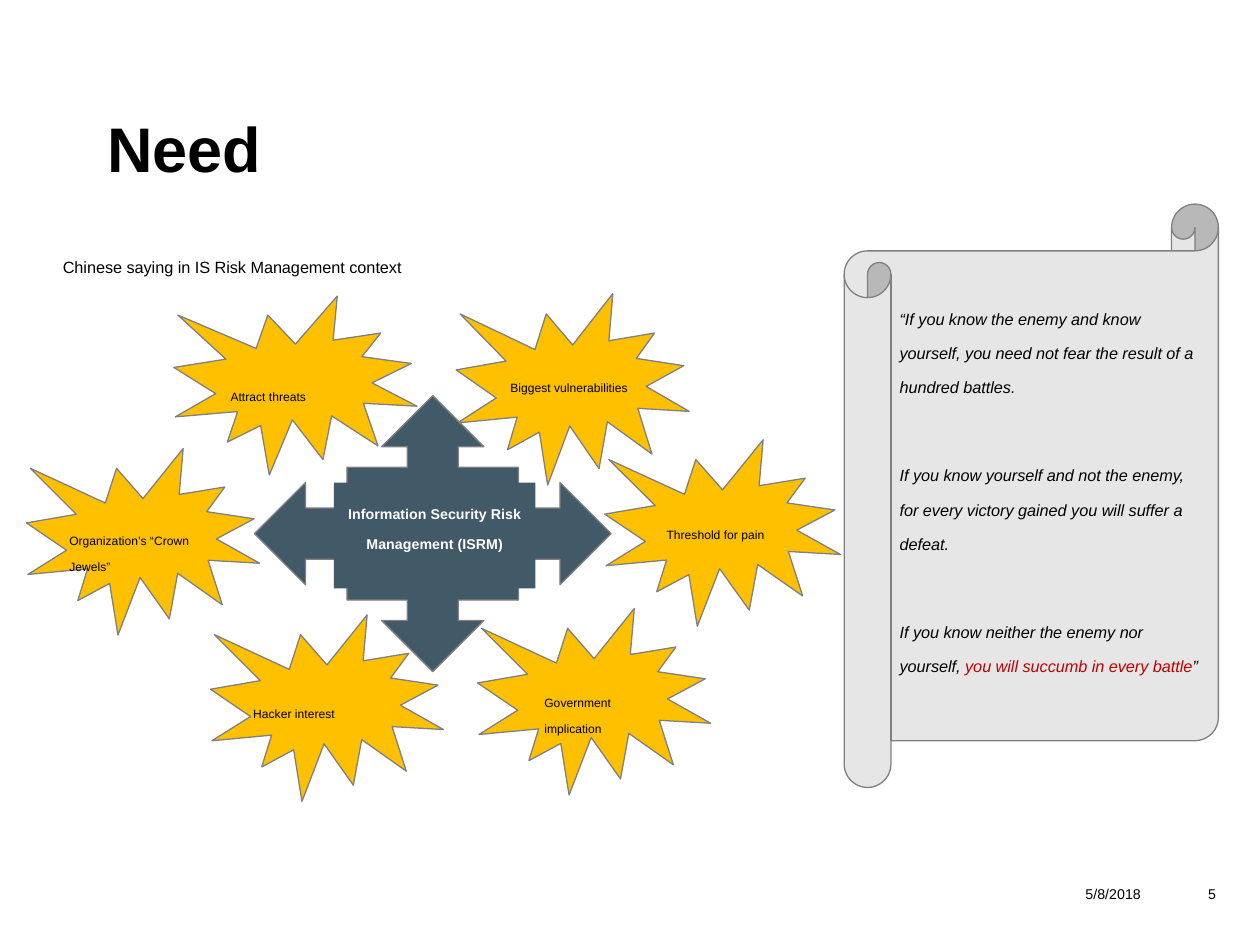
from pptx import Presentation
from pptx.dml.color import RGBColor
from pptx.enum.shapes import MSO_SHAPE as Kind
from pptx.enum.text import MSO_ANCHOR as Anchor, MSO_AUTO_SIZE as Fit, PP_ALIGN as Align
from pptx.util import Inches, Pt

COLORS = {"ink": "000000", "gold": "FFC000", "slate": "425968", "edge": "808080",
          "paper": "E6E6E6", "red": "C00000", "white": "FFFFFF"}
COLS = 100
LOW = "-33000"

TITLE = ("Need", (7.5, 4.2, 85, 15))
NOTES = [
    ("5/8/2018", (79.2, 68.3, 18.3, 5), 14, Align.CENTER),
    ("5", (92.5, 68.3, 5, 5), 14, Align.RIGHT),
    ("Chinese saying in IS Risk Management context", (4, 18.3, 58.5, 3.7), 16, Align.LEFT),
]
LEFT = [
    ("Organization’s “Crown Jewels”", (2.1, 35.6, 18.5, 14.8), (5.5, 40.7, 12.7, 3.8)),
    ("Attract threats", (13.8, 23.5, 19.3, 14.2), (18.3, 29.3, 10.5, 2.1)),
    ("Biggest vulnerabilities", (36.2, 23.3, 18.5, 15.2), (40.5, 28.6, 12.7, 3.8)),
    ("Threshold for pain", (48, 34.9, 18.7, 14.8), (52.9, 40.2, 12.7, 3.8)),
]
LAST = [
    ("Hacker interest", (16.7, 48.8, 18.5, 14.8), (20.1, 54.4, 12.7, 2.1)),
    ("Government implication", (37.9, 48.3, 18.5, 14.8), (43.2, 53.6, 9.5, 3.8)),
]
CORE = ("Information Security Risk Management (ISRM)",
        (20.2, 31.4, 28.3, 21.9), (26.5, 38.3, 16, 8.4))
SCROLL = ((67, 16.2, 29.7, 46.3), (71.4, 22.5, 24.3, 34))
SAYING = [
    [("“If you know the enemy and know yourself, you need not fear the result of a "
      "hundred battles.", "ink")],
    [("If you know yourself and not the enemy, for every victory gained you will "
      "suffer a defeat.", "ink")],
    [("If you know neither the enemy nor yourself, ", "ink"),
     ("you will succumb in every battle", "red"), ("”", "ink")],
]

deck = Presentation()
deck.slide_width, deck.slide_height = Inches(10), Inches(7.5)
slide = deck.slides.add_slide(deck.slide_layouts[5])
unit = deck.slide_width / COLS


def place(box):
    return [round(n * unit) for n in box]


def tint(name):
    return RGBColor.from_string(COLORS[name])


def draw(home, kind, box, fill, edge=True):
    shape = home.shapes.add_shape(kind, *place(box))
    shape.shadow.inherit = False
    shape.fill.solid()
    shape.fill.fore_color.rgb = tint(fill)
    if edge:
        shape.line.color.rgb = tint("edge")
        shape.line.width = Pt(0.75)
    else:
        shape.line.fill.background()
    return shape


def write(shape, paras, size, align=Align.LEFT, bold=False, slant=False, tight=True, gap=6):
    frame = shape.text_frame
    frame.word_wrap = True
    frame.vertical_anchor = Anchor.TOP
    if tight:
        frame.margin_left = frame.margin_right = frame.margin_bottom = 0
        frame.margin_top = Inches(0.04)
        frame.auto_size = Fit.SHAPE_TO_FIT_TEXT
    for i, runs in enumerate(paras):
        para = frame.add_paragraph() if i else frame.paragraphs[0]
        para.alignment = align
        if tight:
            para.line_spacing = 0.85
            para.space_after = Pt(gap if i < len(paras) - 1 else 6)
        font = para.font
        font.name, font.size, font.bold, font.italic = "Arial", Pt(size), bold, slant
        for text, color in runs:
            run = para.add_run()
            run.text = text
            run.font.size = Pt(size)
            run.font.color.rgb = tint(color)
            run._r.get_or_add_rPr().set("baseline", LOW)


def label(home, box, *args, **opts):
    write(home.shapes.add_textbox(*place(box)), *args, **opts)


def burst(text, star, box):
    group = slide.shapes.add_group_shape()
    draw(group, Kind.EXPLOSION1, star, "gold")
    label(group, box, [[(text, "ink")]], 12)


head = slide.shapes.title
head.left, head.top, head.width, head.height = place(TITLE[1])
head.text_frame.text = TITLE[0]
head.text_frame.vertical_anchor = Anchor.MIDDLE
para = head.text_frame.paragraphs[0]
para.alignment = Align.LEFT
para.font.name, para.font.size, para.font.bold = "Arial", Pt(36), True
para.font.color.rgb = tint("ink")

for text, box, size, align in NOTES:
    label(slide, box, [[(text, "ink")]], size, align, tight=False)

for item in LEFT:
    burst(*item)

text, cross, box = CORE
group = slide.shapes.add_group_shape()
draw(group, Kind.QUAD_ARROW_CALLOUT, cross, "slate")
plate = draw(group, Kind.RECTANGLE, box, "slate", edge=False)
write(plate, [[(text, "white")]], 14, Align.CENTER, bold=True)

for item in LAST:
    burst(*item)

sheet, box = SCROLL
group = slide.shapes.add_group_shape()
draw(group, Kind.HORIZONTAL_SCROLL, sheet, "paper")
label(group, box, SAYING, 16, slant=True, gap=30.5)

deck.save("out.pptx")
